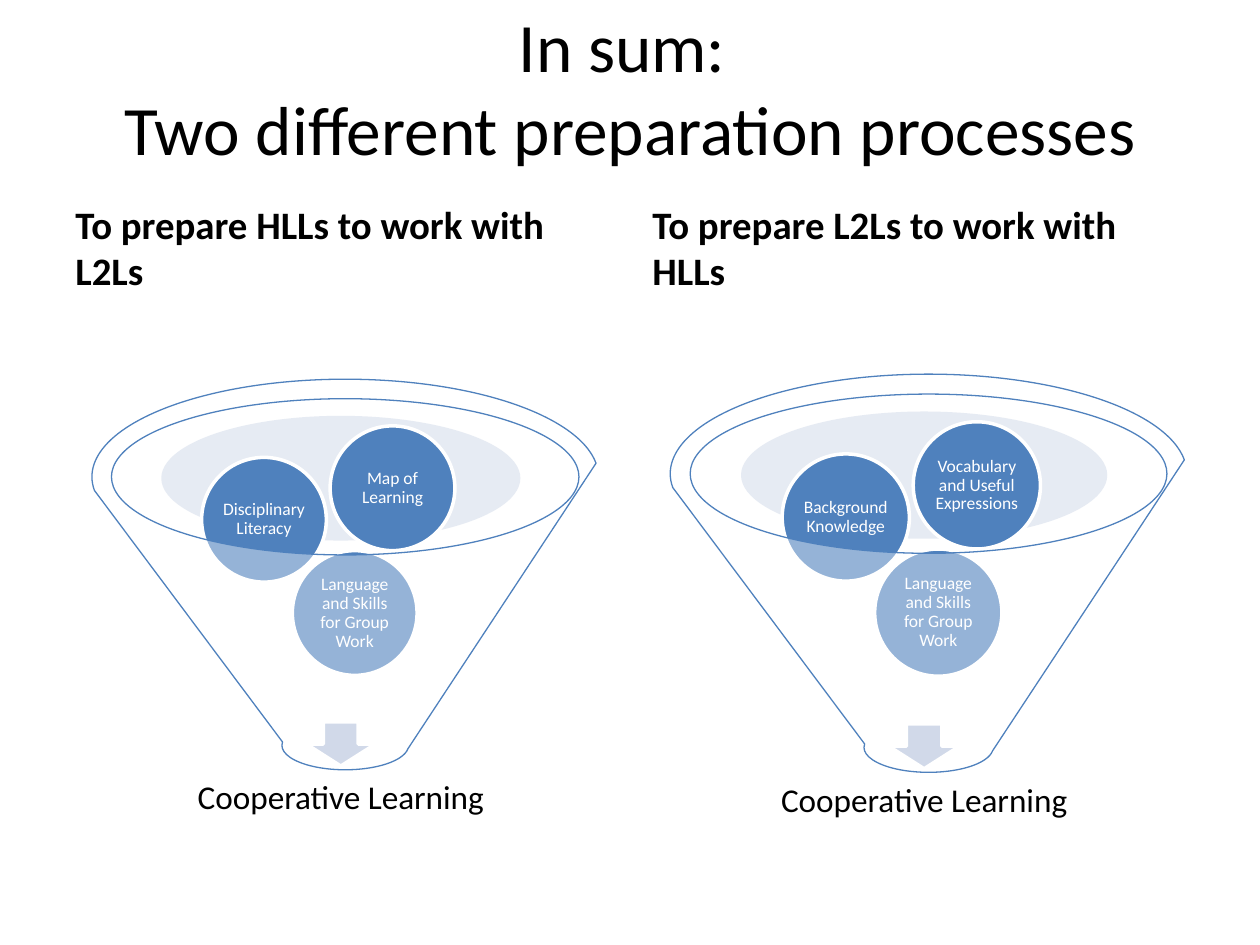
from dataclasses import dataclass

from lxml import etree
from pptx import Presentation
from pptx.dml.color import RGBColor
from pptx.enum.shapes import MSO_SHAPE
from pptx.enum.text import MSO_ANCHOR, PP_ALIGN
from pptx.oxml.ns import qn
from pptx.util import Emu, Pt

OVAL, ARROW, FUNNEL = MSO_SHAPE.OVAL, MSO_SHAPE.DOWN_ARROW, MSO_SHAPE.FUNNEL
LEFT, CENTER = PP_ALIGN.LEFT, PP_ALIGN.CENTER
MIDDLE, BOTTOM = MSO_ANCHOR.MIDDLE, MSO_ANCHOR.BOTTOM
PX = 9144
FUNNEL_W = 402
BALL_SIZE = 99
BALL_SPOTS = [(159, 136), (87, 62), (189, 37)]


@dataclass(frozen=True)
class Theme:
    """Colours and type sizes of the slide."""
    font: str = "Calibri"
    ink: str = "000000"
    white: str = "FFFFFF"
    blue: str = "4F81BD"
    pool: str = "C2CDE1"
    arrow: str = "B3C1DB"
    title: float = 39.6
    heading: float = 22.2
    result: float = 19
    label: float = 10


T = Theme()


def px(n):
    """Turn px into EMU."""
    return Emu(round(n * PX))


def write(sp, lines, size, color, align=CENTER, anchor=MIDDLE, inset=(10, 5),
          bold=False, spacing=None):
    """Write one paragraph, with a line break between lines."""
    tf = sp.text_frame
    tf.word_wrap = True
    tf.vertical_anchor = anchor
    tf.margin_left = tf.margin_right = px(inset[0])
    tf.margin_top = tf.margin_bottom = px(inset[1])
    p = tf.paragraphs[0]
    p.alignment = align
    if spacing:
        p.line_spacing = spacing
    for i, line in enumerate(lines):
        if i:
            p.add_line_break()
        r = p.add_run()
        r.text = line
        r.font.name, r.font.size, r.font.bold = T.font, Pt(size), bold
        r.font.color.rgb = RGBColor.from_string(color)


def add_text(s, box, lines, size, **style):
    """Add a text box in dark ink."""
    sp = s.shapes.add_textbox(*map(px, box))
    write(sp, lines, size, T.ink, **style)


def add_shape(s, kind, box, fill, line=None, width=2, alpha=None):
    """Add a preset shape with its fill, opacity in percent and outline."""
    sp = s.shapes.add_shape(kind, *map(px, box))
    sp.shadow.inherit = False
    sp.fill.solid()
    sp.fill.fore_color.rgb = RGBColor.from_string(fill)
    if alpha:
        clr = sp.fill._xPr.find(qn("a:solidFill"))[0]
        etree.SubElement(clr, qn("a:alpha")).set("val", str(alpha * 1000))
    if line:
        sp.line.color.rgb = RGBColor.from_string(line)
        sp.line.width = Pt(width)
    else:
        sp.line.fill.background()
    return sp


def add_title(s, box):
    """Place the two-line title."""
    add_text(s, box, ["In sum: ", "Two different preparation processes"], T.title)


def add_heading(s, box, text):
    """Place a column heading."""
    add_text(s, box, [text], T.heading, align=LEFT, anchor=BOTTOM, bold=True)


def add_funnel(s, box, labels, result):
    """Place the funnel with its balls, arrow and result, scaled to the box."""
    x, y, w, h = box
    k = w / FUNNEL_W

    def place(left, top, width, height):
        """Map a part of the funnel to the slide."""
        return x + left * k, y + top * k, width * k, height * k

    add_shape(s, OVAL, place(55, 29, 285, 99), T.pool, alpha=40)
    add_shape(s, ARROW, place(170, 272, 55, 35), T.arrow, T.white)
    add_text(s, place(65, 300, 265, 66), [result], T.result,
             inset=(15, 15), spacing=0.9)
    for (left, top), label in zip(BALL_SPOTS, labels):
        ball = add_shape(s, OVAL, place(left, top, BALL_SIZE, BALL_SIZE),
                         T.blue, T.white)
        write(ball, [label], T.label, T.white, inset=(1, 1), spacing=0.9)
    add_shape(s, FUNNEL, box, T.white, T.blue, 0.75, alpha=40)


def main():
    """Build the slide and save it."""
    prs = Presentation()
    prs.slide_width, prs.slide_height = px(1000), px(750)
    s = prs.slides.add_slide(prs.slide_layouts[6])
    add_title(s, (0, 17, 1000, 103))
    columns = [
        (50, "To prepare HLLs to work with L2Ls", (73, 301, 402, 310),
         ["Disciplinary Literacy", "Map of Learning"]),
        (508, "To prepare L2Ls to work with HLLs", (532, 297, 410, 316),
         ["Background Knowledge", "Vocabulary and Useful Expressions"]),
    ]
    for left, heading, box, labels in columns:
        add_heading(s, (left, 168, 442, 70), heading)
        add_funnel(s, box, ["Language and Skills for Group Work", *labels],
                   "Cooperative Learning")
    prs.save("out.pptx")


if __name__ == "__main__":
    main()
